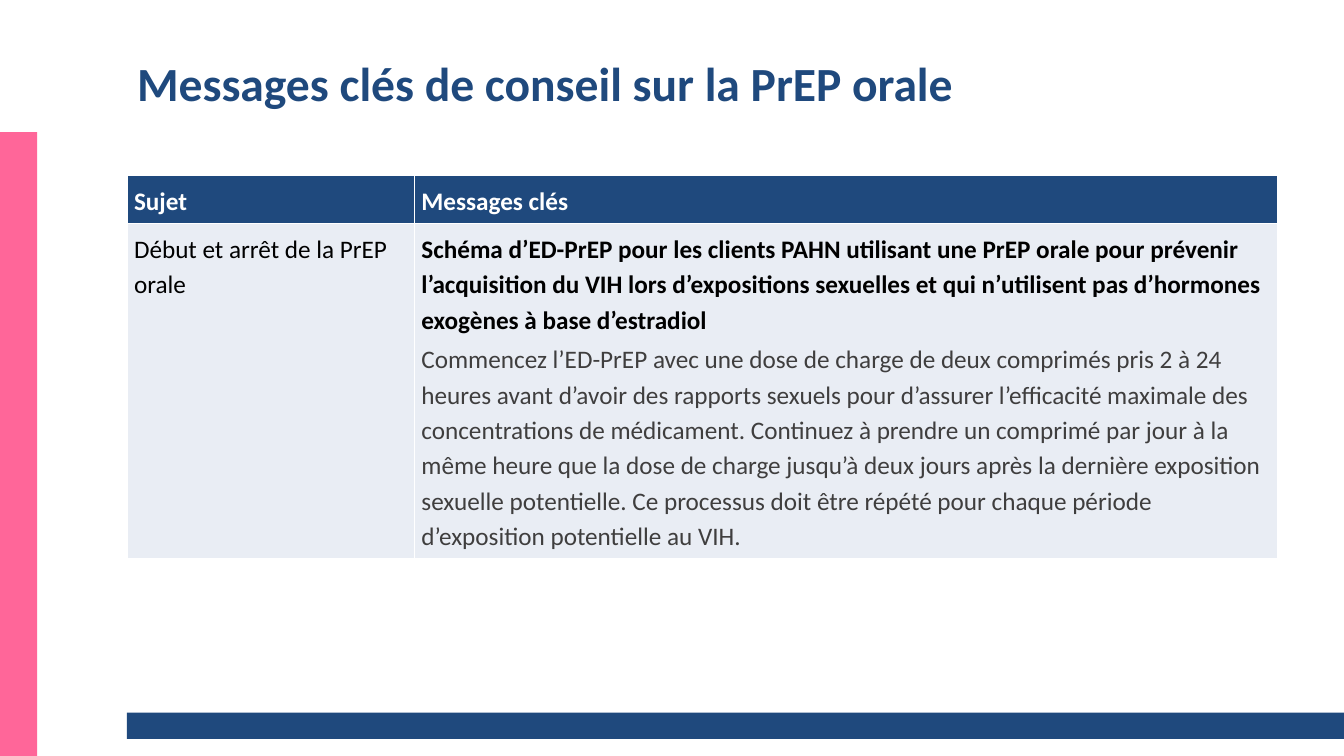
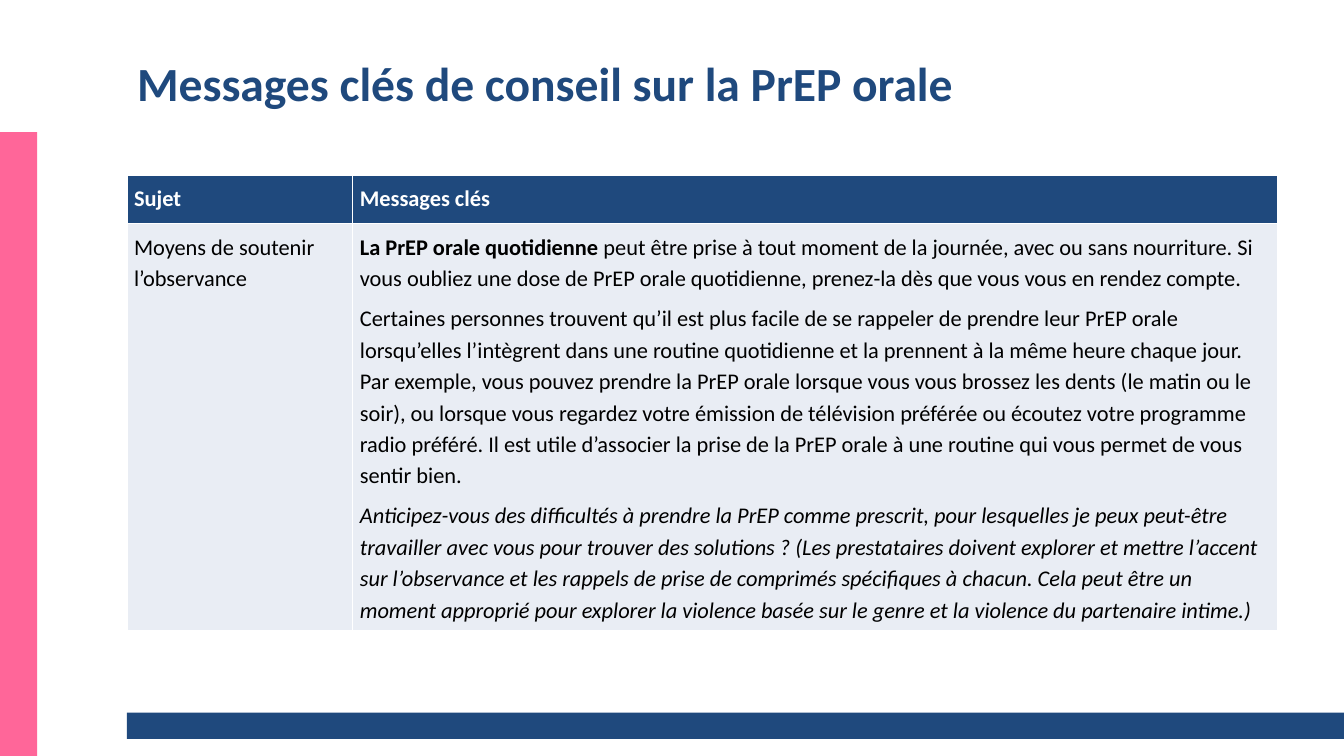
from dataclasses import dataclass

import lxml.etree
import pptx
import pptx.dml.color
import pptx.enum.shapes
import pptx.enum.text
import pptx.oxml.ns
import pptx.slide
import pptx.table
import pptx.text.text
import pptx.util
from pptx.util import Inches

NAVY, PINK, PALE = "1F497D", "FF6699", "E9EDF4"
WHITE, BLACK, GREY = "FFFFFF", "000000", "3F3E3E"
FONT = "Calibri"
TITLE = "Messages clés de conseil sur la PrEP orale"
HEADINGS = ("Sujet", "Messages clés")

SLIDE_WIDTH, SLIDE_HEIGHT = 13.33, 7.5
LEFT, CONTENT_WIDTH = 1.26, 11.41
TABLE_TOP, HEADER_HEIGHT = 1.74, 0.48


@dataclass(frozen=True)
class Band:
    left: float
    top: float
    width: float
    height: float
    color: str


@dataclass(frozen=True)
class Message:
    text: str
    lead: str = ""  # bold opening words
    color: str = BLACK
    bold: bool = False
    italic: bool = False
    before: float = 0
    after: float = 0


@dataclass(frozen=True)
class Topic:
    subject: str
    messages: tuple[Message, ...]
    subject_width: float
    body_height: float
    size: float


BANDS = (
    Band(0, 1.31, 0.37, SLIDE_HEIGHT - 1.31, PINK),
    Band(LEFT, 7.07, SLIDE_WIDTH - LEFT, 0.26, NAVY),
)

TOPICS = (
    Topic(
        "Début et arrêt de la PrEP orale",
        (
            Message(
                "Schéma d’ED-PrEP pour les clients PAHN utilisant une PrEP orale pour "
                "prévenir l’acquisition du VIH lors d’expositions sexuelles et qui "
                "n’utilisent pas d’hormones exogènes à base d’estradiol",
                bold=True, before=3, after=3,
            ),
            Message(
                "Commencez l’ED-PrEP avec une dose de charge de deux comprimés pris 2 à "
                "24 heures avant d’avoir des rapports sexuels pour d’assurer l’efficacité "
                "maximale des concentrations de médicament. Continuez à prendre un comprimé "
                "par jour à la même heure que la dose de charge jusqu’à deux jours après la "
                "dernière exposition sexuelle potentielle. Ce processus doit être répété pour "
                "chaque période d’exposition potentielle au VIH.",
                color=GREY,
            ),
        ),
        subject_width=2.85, body_height=3.31, size=18,
    ),
    Topic(
        "Moyens de soutenir l’observance",
        (
            Message(
                " peut être prise à tout moment de la journée, avec ou sans nourriture. Si "
                "vous oubliez une dose de PrEP orale quotidienne, prenez-la dès que vous vous "
                "en rendez compte.",
                lead="La PrEP orale quotidienne",
            ),
            Message(
                "Certaines personnes trouvent qu’il est plus facile de se rappeler de prendre "
                "leur PrEP orale lorsqu’elles l’intègrent dans une routine quotidienne et la "
                "prennent à la même heure chaque jour. Par exemple, vous pouvez prendre la "
                "PrEP orale lorsque vous vous brossez les dents (le matin ou le soir), ou "
                "lorsque vous regardez votre émission de télévision préférée ou écoutez votre "
                "programme radio préféré. Il est utile d’associer la prise de la PrEP orale à "
                "une routine qui vous permet de vous sentir bien.",
                before=6,
            ),
            Message(
                "Anticipez-vous des difficultés à prendre la PrEP comme prescrit, pour "
                "lesquelles je peux peut-être travailler avec vous pour trouver des "
                "solutions ? (Les prestataires doivent explorer et mettre l’accent sur "
                "l’observance et les rappels de prise de comprimés spécifiques à chacun. Cela "
                "peut être un moment approprié pour explorer la violence basée sur le genre "
                "et la violence du partenaire intime.)",
                italic=True, before=6,
            ),
        ),
        subject_width=2.24, body_height=4.03, size=16,
    ),
)


def rgb(color: str) -> pptx.dml.color.RGBColor:
    return pptx.dml.color.RGBColor.from_string(color)


def style_font(font: pptx.text.text.Font, size: float, color: str,
               bold: bool = False, italic: bool = False) -> None:
    font.name = FONT
    font.size = pptx.util.Pt(size)
    font.color.rgb = rgb(color)
    font.bold = bold
    font.italic = italic


def add_bands(slide: pptx.slide.Slide) -> None:
    """Draw the bands and move them to the layout that all slides share."""
    for band in BANDS:
        bar = slide.shapes.add_shape(
            pptx.enum.shapes.MSO_SHAPE.RECTANGLE,
            Inches(band.left), Inches(band.top), Inches(band.width), Inches(band.height))
        bar.shadow.inherit = False
        bar.fill.solid()
        bar.fill.fore_color.rgb = rgb(band.color)
        bar.line.fill.background()
        slide.slide_layout.shapes.element.append(bar.element)


def add_title(slide: pptx.slide.Slide) -> None:
    title = slide.shapes.title
    title.left, title.top = Inches(LEFT), Inches(0.35)
    title.width, title.height = Inches(CONTENT_WIDTH), Inches(0.94)
    title.text_frame.vertical_anchor = pptx.enum.text.MSO_ANCHOR.MIDDLE
    heading = title.text_frame.paragraphs[0]
    heading.text = TITLE
    heading.alignment = pptx.enum.text.PP_ALIGN.LEFT
    style_font(heading.font, 34, NAVY, bold=True)


def add_borders(cell: pptx.table._Cell) -> None:
    qn = pptx.oxml.ns.qn
    properties = cell._tc.get_or_add_tcPr()
    for side in ("a:lnL", "a:lnR", "a:lnT", "a:lnB"):
        border = lxml.etree.SubElement(properties, qn(side), w=str(pptx.util.Pt(1)))
        fill = lxml.etree.SubElement(border, qn("a:solidFill"))
        lxml.etree.SubElement(fill, qn("a:srgbClr"), val=WHITE)


def fill_cell(cell: pptx.table._Cell, messages: tuple[Message, ...],
              size: float, fill: str) -> None:
    cell.margin_left = cell.margin_right = Inches(0.07)
    cell.margin_top = cell.margin_bottom = Inches(0.06)
    add_borders(cell)
    cell.fill.solid()
    cell.fill.fore_color.rgb = rgb(fill)
    frame = cell.text_frame
    for index, message in enumerate(messages):
        paragraph = frame.add_paragraph() if index else frame.paragraphs[0]
        paragraph.line_spacing = 1.15
        paragraph.space_before = pptx.util.Pt(message.before)
        paragraph.space_after = pptx.util.Pt(message.after)
        style_font(paragraph.font, size, message.color, message.bold, message.italic)
        if message.lead:
            lead = paragraph.add_run()
            lead.text = message.lead
            lead.font.bold = True
        paragraph.add_run().text = message.text


def add_topic_table(slide: pptx.slide.Slide, topic: Topic) -> None:
    table = slide.shapes.add_table(
        2, 2, Inches(LEFT), Inches(TABLE_TOP), Inches(CONTENT_WIDTH),
        Inches(HEADER_HEIGHT + topic.body_height)).table
    table.horz_banding = False
    widths = (topic.subject_width, CONTENT_WIDTH - topic.subject_width)
    for column, width in zip(table.columns, widths):
        column.width = Inches(width)
    for row, height in zip(table.rows, (HEADER_HEIGHT, topic.body_height)):
        row.height = Inches(height)

    bodies = ((Message(topic.subject),), topic.messages)
    for column, (heading, body) in enumerate(zip(HEADINGS, bodies)):
        header = (Message(heading, color=WHITE, bold=True),)
        fill_cell(table.cell(0, column), header, topic.size, NAVY)
        fill_cell(table.cell(1, column), body, topic.size, PALE)


def main() -> None:
    deck = pptx.Presentation()
    deck.slide_width, deck.slide_height = Inches(SLIDE_WIDTH), Inches(SLIDE_HEIGHT)
    title_only = deck.slide_layouts[5]
    for index, topic in enumerate(TOPICS):
        slide = deck.slides.add_slide(title_only)
        if index == 0:
            add_bands(slide)
        add_title(slide)
        add_topic_table(slide, topic)
    deck.save("out.pptx")


if __name__ == "__main__":
    main()
